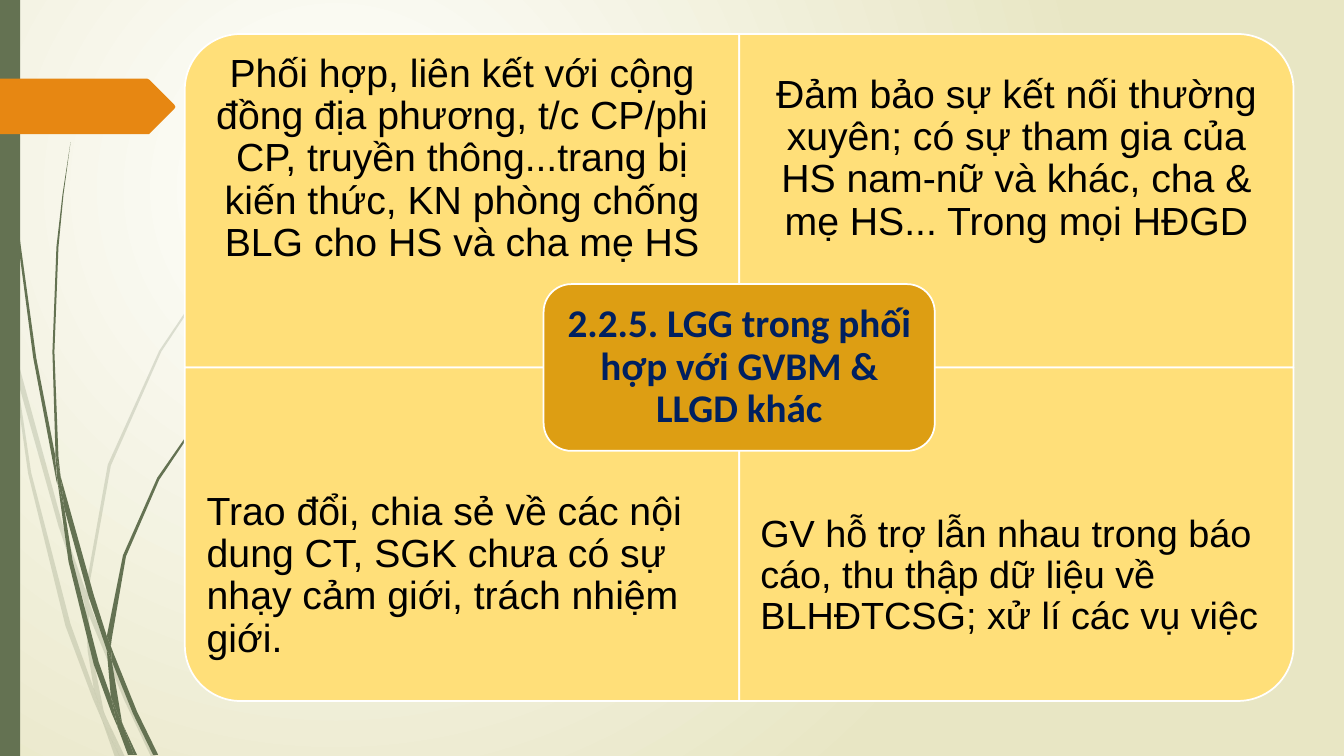
from lxml import etree
from pptx import Presentation
from pptx.dml.color import RGBColor
from pptx.enum.shapes import MSO_SHAPE
from pptx.enum.text import MSO_ANCHOR, PP_ALIGN
from pptx.oxml.ns import qn
from pptx.util import Pt

RECTANGLE = MSO_SHAPE.RECTANGLE
ROUNDED = MSO_SHAPE.ROUNDED_RECTANGLE
ONE_ROUND = MSO_SHAPE.ROUND_1_RECTANGLE
MIDDLE = MSO_ANCHOR.MIDDLE
CENTER, LEFT = PP_ALIGN.CENTER, PP_ALIGN.LEFT

GREEN, ORANGE, YELLOW, GOLD = "647252", "E78712", "FFDF79", "DD9E13"
WHITE, BLACK, NAVY, CREAM = "FFFFFF", "000000", "002060", "E8E6C4"

UNIT = 0.72
CENTER_X, CENTER_Y = 528, 262.5
CELL_W, CELL_H = 396, 238.2
HUB_W, HUB_H, HUB_MARGIN = 279.4, 119.1, 5.8

FAINT_BLADES = [
    [(11, 350), (9, 322), (0, 282), (0, 299), (10, 344)],
    [(58, 522), (84, 599), (85, 586), (62, 520), (14, 345), (17, 376)],
    [(92, 607), (88, 596), (88, 610), (123, 694), (150, 751), (155, 751), (127, 692)],
    [(119, 751), (124, 751), (105, 711)],
    [(93, 683), (70, 619), (31, 469), (17, 376), (11, 350), (28, 470), (65, 621),
     (92, 693), (101, 714), (99, 707)],
    [(84, 599), (87, 646), (93, 683), (96, 692), (105, 711), (103, 706), (91, 646),
     (88, 610), (88, 608)],
    [(88, 584), (110, 462), (160, 349), (229, 245), (268, 198), (290, 175), (312, 154),
     (312, 153), (289, 175), (268, 197), (228, 244), (158, 348), (107, 461), (85, 584),
     (85, 586), (88, 596)],
    [(101, 714), (114, 751), (119, 751)],
    [(88, 608), (88, 610), (88, 596), (85, 586), (84, 599)],
    [(96, 692), (93, 683), (99, 707), (101, 714), (119, 751), (105, 711)],
]
DARK_BLADES = [
    [(7, 110), (17, 233), (33, 355), (56, 477), (57, 481), (55, 457), (55, 453),
     (36, 355), (19, 232), (8, 109), (5, 48), (4, 0), (3, 0), (4, 48)],
    [(88, 592), (106, 645), (106, 633), (106, 631), (93, 590), (60, 472), (64, 505)],
    [(113, 649), (110, 641), (111, 656), (132, 708), (152, 749), (157, 749), (136, 706)],
    [(110, 691), (98, 657), (72, 556), (64, 505), (57, 477), (68, 557), (93, 659),
     (111, 708), (117, 722), (116, 717)],
    [(60, 472), (58, 453), (54, 349), (58, 245), (63, 193), (70, 141), (62, 193),
     (56, 245), (52, 349), (55, 449)],
    [(133, 749), (136, 749), (122, 719)],
    [(57, 477), (64, 505), (60, 472), (55, 449), (55, 453)],
    [(111, 633), (125, 552), (158, 476), (205, 406), (231, 374), (245, 359), (261, 344),
     (260, 344), (245, 358), (231, 373), (204, 405), (156, 474), (122, 551), (106, 631),
     (110, 641)],
    [(117, 722), (127, 749), (131, 749)],
    [(106, 645), (110, 691), (116, 706), (122, 719), (121, 716), (111, 656), (109, 651)],
    [(106, 645), (109, 651), (111, 656), (110, 641), (106, 631), (106, 633)],
    [(116, 706), (110, 691), (116, 717), (117, 722), (130, 749), (133, 749), (122, 719)],
]
ARROW = [(173, 108), (148, 133), (146, 133), (136, 133), (0, 133), (0, 78), (136, 78),
         (146, 78), (148, 79), (173, 104), (174, 106)]

QUADRANTS = [
    (0, 0, 270, CENTER, 28, "Phối hợp, liên kết với cộng đồng địa phương, t/c CP/phi CP, "
     "truyền thông...trang bị kiến thức, KN phòng chống BLG cho HS và cha mẹ HS"),
    (1, 0, 0, CENTER, 28, "Đảm bảo sự kết nối thường xuyên; có sự tham gia của "
     "HS nam-nữ và khác, cha & mẹ HS... Trong mọi HĐGD"),
    (0, 1, 180, LEFT, 28, "Trao đổi, chia sẻ về các nội dung CT, SGK chưa có sự "
     "nhạy cảm giới, trách nhiệm giới."),
    (1, 1, 90, LEFT, 27, "GV hỗ trợ lẫn nhau trong báo cáo, thu thập dữ liệu về "
     "BLHĐTCSG; xử lí các vụ việc"),
]
HUB_TEXT = "2.2.5. LGG trong phối hợp với GVBM & LLGD khác"


def color(value):
    return RGBColor.from_string(value)


class SlideBuilder:
    def __init__(self, page):
        self.page = page
        self.line_width = 1.25

    def background(self, inner, outer):
        fill = self.page.background.fill
        fill.gradient()
        for stop, value, position in zip(fill.gradient_stops, (inner, outer), (0, 1)):
            stop.color.rgb = color(value)
            stop.position = position
        gradient = self.page.element.find(".//" + qn("a:gradFill"))
        linear = gradient.find(qn("a:lin"))
        if linear is not None:
            gradient.remove(linear)
        radial = etree.SubElement(gradient, qn("a:path"), {"path": "circle"})
        etree.SubElement(radial, qn("a:fillToRect"),
                         {"l": "50000", "t": "50000", "r": "100000", "b": "100000"})

    def paint(self, shape, fill, line=None):
        shape.shadow.inherit = False
        shape.fill.solid()
        shape.fill.fore_color.rgb = color(fill)
        if line:
            shape.line.color.rgb = color(line)
            shape.line.width = Pt(self.line_width)
        else:
            shape.line.fill.background()

    def shape(self, kind, left, top, width, height, fill, line=None, rotation=0):
        shape = self.page.shapes.add_shape(kind, Pt(left), Pt(top), Pt(width), Pt(height))
        shape.rotation = rotation
        self.paint(shape, fill, line)

    def outline(self, points, fill, opacity=100):
        corners = [(Pt(x * UNIT), Pt(y * UNIT)) for x, y in points]
        builder = self.page.shapes.build_freeform(*corners[0])
        builder.add_line_segments(corners[1:], close=True)
        shape = builder.convert_to_shape()
        self.paint(shape, fill)
        if opacity < 100:
            tint = shape.fill._xPr.find(".//" + qn("a:srgbClr"))
            etree.SubElement(tint, qn("a:alpha"), val=str(opacity * 1000))

    def text(self, left, top, width, height, words, inset, align, ink, font):
        box = self.page.shapes.add_textbox(Pt(left), Pt(top), Pt(width), Pt(height))
        frame = box.text_frame
        frame.word_wrap = True
        frame.vertical_anchor = MIDDLE
        for side in ("left", "top", "right", "bottom"):
            setattr(frame, "margin_" + side, Pt(inset))
        para = frame.paragraphs[0]
        para.alignment = align
        para.line_spacing = 0.9
        span = para.add_run()
        span.text = words
        for name, value in font.items():
            setattr(span.font, name, value)
        span.font.color.rgb = color(ink)

    def quadrant(self, column, row, rotation, align, size, words):
        left = CENTER_X + (column - 1) * CELL_W
        top = CENTER_Y + (row - 1) * CELL_H
        turned = rotation in (90, 270)
        width, height = (CELL_H, CELL_W) if turned else (CELL_W, CELL_H)
        self.shape(ONE_ROUND, left + (CELL_W - width) / 2, top + (CELL_H - height) / 2,
                   width, height, YELLOW, WHITE, rotation)
        self.text(left, top + row * CELL_H / 4, CELL_W, CELL_H * 0.75, words,
                  size * 0.56, align, BLACK, {"name": "Arial", "size": Pt(size)})

    def hub(self, words):
        left, top = CENTER_X - HUB_W / 2, CENTER_Y - HUB_H / 2
        self.shape(ROUNDED, left, top, HUB_W, HUB_H, GOLD, WHITE)
        self.text(left + HUB_MARGIN, top + HUB_MARGIN, HUB_W - 2 * HUB_MARGIN,
                  HUB_H - 2 * HUB_MARGIN, words, 8.4, CENTER, NAVY,
                  {"name": "Calibri", "size": Pt(28), "bold": True})


def main():
    deck = Presentation()
    deck.slide_width, deck.slide_height = Pt(960), Pt(540)
    slide = SlideBuilder(deck.slides.add_slide(deck.slide_layouts[6]))
    slide.background(WHITE, CREAM)
    for blades, opacity in ((FAINT_BLADES, 20), (DARK_BLADES, 100)):
        for blade in blades:
            slide.outline(blade, GREEN, opacity)
    slide.shape(RECTANGLE, 0, 0, 14.4, 540, GREEN)
    slide.outline(ARROW, ORANGE)
    for quadrant in QUADRANTS:
        slide.quadrant(*quadrant)
    slide.hub(HUB_TEXT)
    deck.save("out.pptx")


if __name__ == "__main__":
    main()
